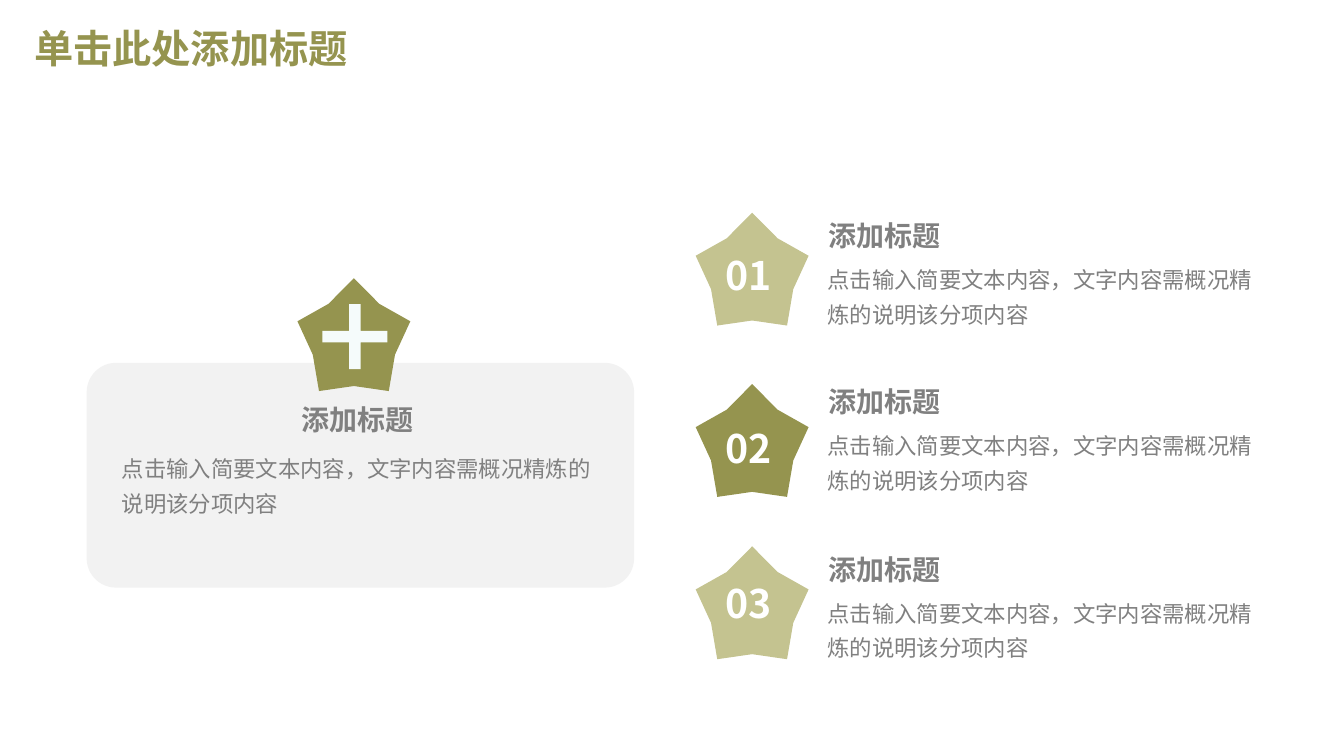
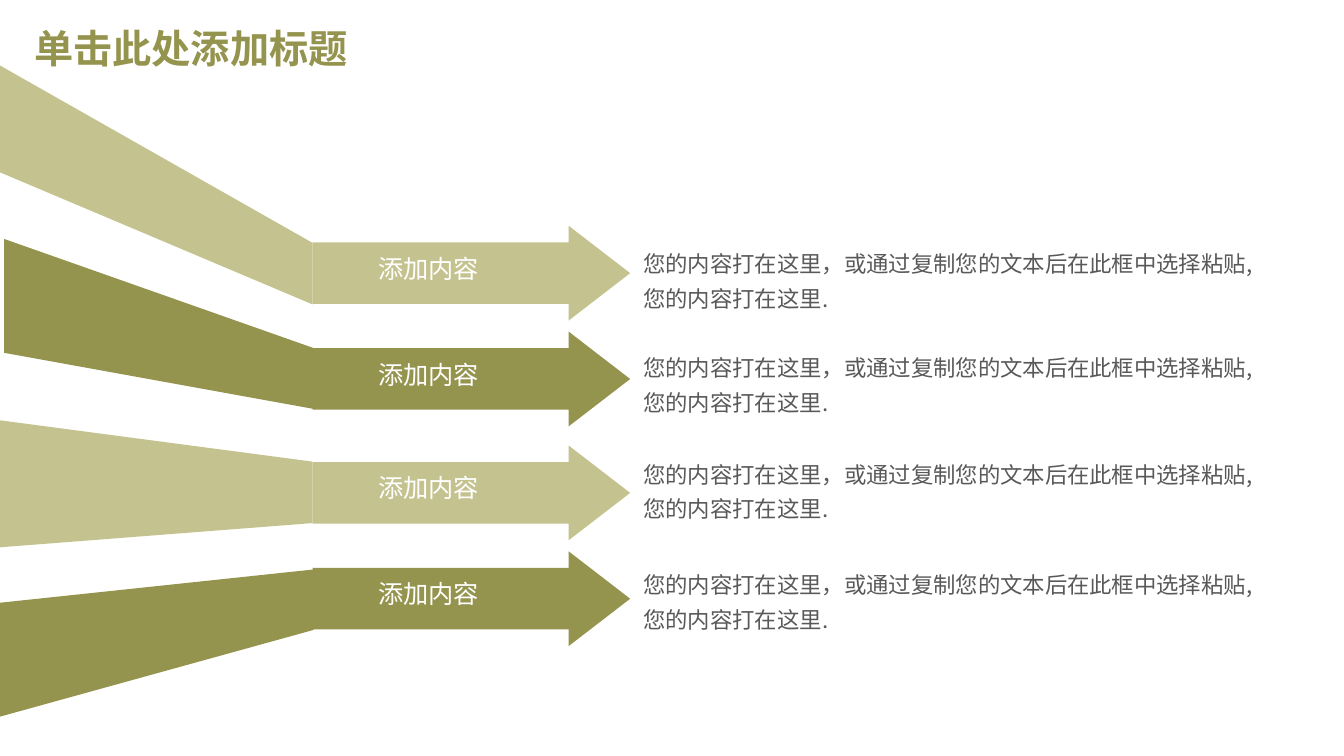
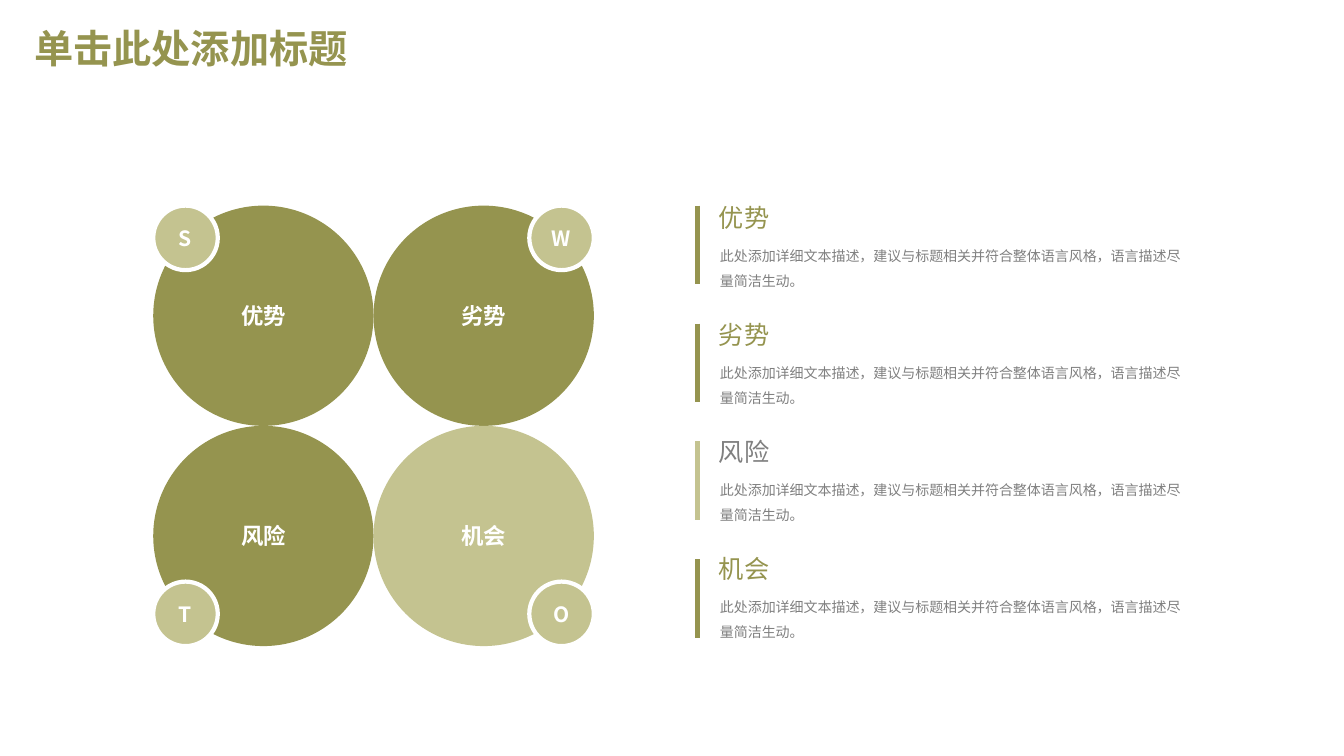
from lxml import etree
from pptx import Presentation
from pptx import util as u
from pptx.dml.color import RGBColor
from pptx.enum import shapes as kinds, text
from pptx.oxml.ns import qn

WIDTH, HEIGHT = 13.33, 7.5
FONT, TITLE_FONT = "Noto Sans CJK SC", "Montserrat"
COLOURS = {
    "olive": "95944F", "sand": "C4C390", "panel": "F2F2F2", "plus": "F5FBFB",
    "grey": "808080", "dark": "595959", "white": "FFFFFF",
}
TITLE = "单击此处添加标题"

POINT_HEADING = "添加标题"
POINT_BODY = "点击输入简要文本内容，文字内容需概况精炼的说明该分项内容"
# number, colour, then the tops of star, number and heading
POINTS = [
    ("01", "sand", 2.11, 2.44, 2.12),
    ("02", "olive", 3.81, 4.16, 3.77),
    ("03", "sand", 5.42, 5.7, 5.43),
]

ARROW_LABEL = "添加内容"
ARROW_BODY = "您的内容打在这里，或通过复制您的文本后在此框中选择粘贴,您的内容打在这里."
# colour, arrow top, body top, corners of the band leading into the arrow
ARROWS = [
    ("sand", 2.24, 2.33, [(0, 0.65), (3.1, 2.41), (3.1, 3.02), (0, 1.71)]),
    ("olive", 3.29, 3.36, [(0.04, 2.37), (3.13, 3.46), (3.13, 4.06), (0.04, 3.5)]),
    ("sand", 4.42, 4.42, [(0, 4.17), (3.1, 4.58), (3.1, 5.19), (0, 5.43)]),
    ("olive", 5.47, 5.52, [(0, 5.98), (3.11, 5.65), (3.11, 6.25), (0, 7.11)]),
]

# name, letter, circle colour, heading colour, bar colour
SWOT = [
    ("优势", "S", "olive", "olive", "olive"),
    ("劣势", "W", "olive", "olive", "olive"),
    ("风险", "T", "olive", "grey", "sand"),
    ("机会", "O", "sand", "olive", "olive"),
]
SWOT_BODY = "此处添加详细文本描述，建议与标题相关并符合整体语言风格，语言描述尽量简洁生动。"


def rgb(name):
    return RGBColor.from_string(COLOURS[name])


def inches(*lengths):
    return [u.Inches(length) for length in lengths]


def write(frame, words, size, colour, bold=False, spacing=None, font=FONT,
          align=text.PP_ALIGN.LEFT, anchor=text.MSO_ANCHOR.TOP,
          insets=(0.1, 0.05), wrap=True):
    frame.word_wrap = wrap
    frame.auto_size = text.MSO_AUTO_SIZE.NONE
    frame.vertical_anchor = anchor
    frame.margin_left = frame.margin_right = u.Inches(insets[0])
    frame.margin_top = frame.margin_bottom = u.Inches(insets[1])
    paragraph = frame.paragraphs[0]
    paragraph.alignment = align
    if spacing:
        paragraph.line_spacing = spacing
    run = paragraph.add_run()
    run.text = words
    run.font.size = u.Pt(size)
    run.font.bold = bold
    run.font.color.rgb = rgb(colour)
    run.font.name = font
    east_asian = etree.SubElement(run._r.get_or_add_rPr(), qn("a:ea"))
    east_asian.set("typeface", FONT)


def add_text(slide, box, words, size, colour, **style):
    frame = slide.shapes.add_textbox(*inches(*box)).text_frame
    write(frame, words, size, colour, **style)


def paint(shape, colour):
    shape.shadow.inherit = False
    shape.fill.solid()
    shape.fill.fore_color.rgb = rgb(colour)
    shape.line.fill.background()


def add_shape(collection, kind, box, colour, adjustments=()):
    shape = collection.add_shape(kind, *inches(*box))
    for index, value in enumerate(adjustments):
        shape.adjustments[index] = value
    paint(shape, colour)
    return shape


def add_star(collection, left, top, colour):
    add_shape(collection, kinds.MSO_SHAPE.STAR_5_POINT, (left, top, 1.12, 1.12), colour, [0.364])


def add_circle(slide, left, top, size, colour, words, text_size):
    circle = add_shape(slide.shapes, kinds.MSO_SHAPE.OVAL, (left, top, size, size), colour)
    write(circle.text_frame, words, text_size, "white", bold=True, insets=(0, 0),
          align=text.PP_ALIGN.CENTER, anchor=text.MSO_ANCHOR.MIDDLE)
    return circle


def add_band(slide, corners, colour):
    points = [tuple(inches(*corner)) for corner in corners]
    builder = slide.shapes.build_freeform(*points[0])
    builder.add_line_segments(points[1:], close=True)
    paint(builder.convert_to_shape(), colour)


def add_bar(slide, left, top, length, colour):
    bar = slide.shapes.add_connector(
        kinds.MSO_CONNECTOR.STRAIGHT, *inches(left, top, left, top + length))
    bar.line.color.rgb = rgb(colour)
    bar.line.width = u.Pt(4)
    etree.SubElement(bar._element.spPr, qn("a:effectLst"))


def add_slide(presentation):
    slide = presentation.slides.add_slide(presentation.slide_layouts[5])
    title = slide.shapes.title
    title.left, title.top, title.width, title.height = inches(0.24, 0.2, 11.5, 0.6)
    write(title.text_frame, TITLE, 28, "olive", bold=True, spacing=0.9,
          font=TITLE_FONT, anchor=text.MSO_ANCHOR.MIDDLE)
    return slide


def build_points(slide):
    add_shape(slide.shapes, kinds.MSO_SHAPE.ROUNDED_RECTANGLE,
              (0.86, 3.6, 5.43, 2.23), "panel", [0.131])
    add_text(slide, (2.89, 3.94, 1.32, 0.44), POINT_HEADING, 20, "grey", bold=True, wrap=False)
    add_text(slide, (1.11, 4.39, 5.01, 0.77), POINT_BODY, 16, "grey", spacing=1.3)
    emblem = slide.shapes.add_group_shape().shapes
    add_star(emblem, 2.95, 2.76, "olive")
    add_shape(emblem, kinds.MSO_SHAPE.MATH_PLUS, (3.08, 2.9, 0.88, 0.88), "plus", [0.13])

    for number, colour, star_top, number_top, top in POINTS:
        add_star(slide.shapes, 6.9, star_top, colour)
        add_text(slide, (7.1, number_top, 0.75, 0.57), number, 28, "white", bold=True)
        add_text(slide, (8.12, top, 1.32, 0.44), POINT_HEADING, 20, "grey", bold=True, wrap=False)
        add_text(slide, (8.11, top + 0.39, 4.55, 0.8), POINT_BODY, 16, "grey", spacing=1.3)


def build_arrows(slide):
    insets = (0.13, 0.07)
    for colour, top, body_top, corners in ARROWS:
        add_shape(slide.shapes, kinds.MSO_SHAPE.RIGHT_ARROW,
                  (3.1, top, 3.15, 0.94), colour, [0.649, 0.649])
        add_band(slide, corners, colour)
        add_text(slide, (3.62, top + 0.2, 1.28, 0.44), ARROW_LABEL, 18, "white",
                 insets=insets, wrap=False)
        add_text(slide, (6.25, body_top, 6.51, 0.83), ARROW_BODY, 16, "dark",
                 spacing=1.3, insets=insets)


def build_swot(slide):
    left, top, side, badge_size = 1.52, 2.04, 4.37, 0.64
    cells = [(index % 2, index // 2) for index in range(len(SWOT))]
    for (column, row), (name, _, colour, _, _) in zip(cells, SWOT):
        add_circle(slide, left + column * side / 2, top + row * side / 2,
                   side / 2, colour, name, 16)
    for (column, row), (_, letter, _, _, _) in zip(cells, SWOT):
        reach = side - badge_size
        badge = add_circle(slide, left + column * reach, top + row * reach,
                           badge_size, "sand", letter, 15)
        badge.line.color.rgb = rgb("white")
        badge.line.width = u.Pt(3)

    for index, (name, _, _, heading_colour, bar_colour) in enumerate(SWOT):
        row_top = top + 1.16 * index
        add_bar(slide, 6.92, top + 1.17 * index, 0.78, bar_colour)
        add_text(slide, (7.13, row_top, 4.69, 0.33), name, 18, heading_colour,
                 spacing=0.9, insets=(0, 0))
        add_text(slide, (7.14, row_top + 0.33, 4.68, 0.56), SWOT_BODY, 10, "grey",
                 spacing=1.5, insets=(0, 0))


def main():
    presentation = Presentation()
    presentation.slide_width, presentation.slide_height = inches(WIDTH, HEIGHT)
    for build in (build_points, build_arrows, build_swot):
        build(add_slide(presentation))
    presentation.save("out.pptx")


if __name__ == "__main__":
    main()
